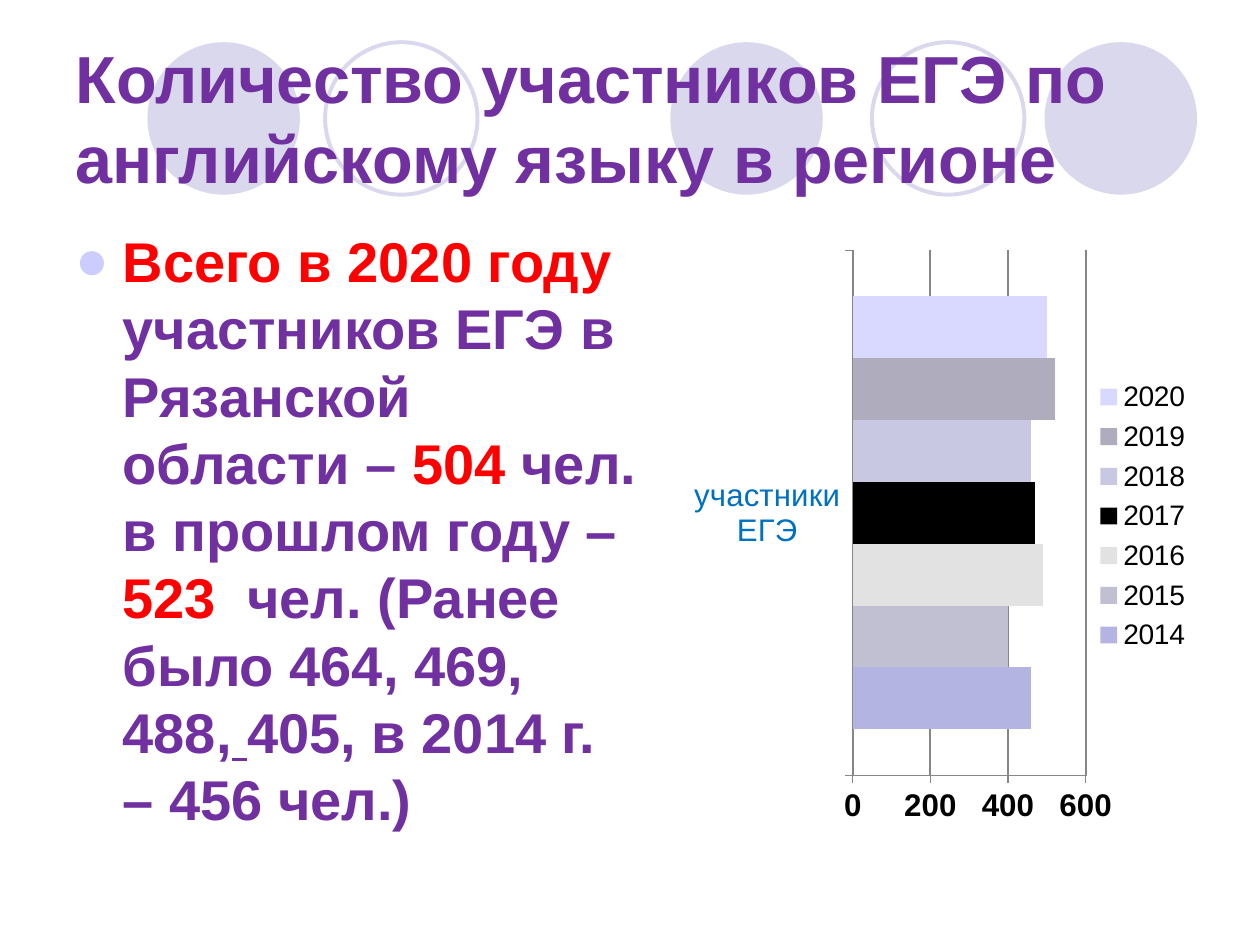
import pptx
import pptx.chart.data
import pptx.dml.color
import pptx.enum.chart
import pptx.enum.shapes
import pptx.enum.text
import pptx.oxml
import pptx.oxml.ns
import pptx.util
from lxml import etree

RGBColor = pptx.dml.color.RGBColor
PURPLE = RGBColor(0x70, 0x30, 0xA0)
RED = RGBColor(0xFF, 0x00, 0x00)
BLUE = RGBColor(0x00, 0x70, 0xC0)
BLACK = RGBColor(0x00, 0x00, 0x00)
GRAY = RGBColor(0x86, 0x86, 0x86)
LAVENDER = RGBColor(0xD9, 0xD8, 0xEC)
BULLET = RGBColor(0xCC, 0xCC, 0xFF)

FONT = "Arial"
WIDTH, HEIGHT = 10, 7.5
COLUMNS, ROWS = 20, 15

TITLE = "Количество участников ЕГЭ по английскому языку в регионе"
BODY = [  # text, colour, underlined
    ("Всего в 2020 году", RED, False),
    (" участников ЕГЭ в Рязанской области – ", PURPLE, False),
    ("504", RED, False),
    (" чел. в прошлом году – ", PURPLE, False),
    ("523  ", RED, False),
    ("чел. (Ранее было 464, 469, 488,", PURPLE, False),
    (" ", PURPLE, True),
    ("405, в 2014 г. – 456 чел.)", PURPLE, False),
]
PARTICIPANTS = [  # year, rounded number, bar colour
    ("2014", 460, RGBColor(0xB4, 0xB4, 0xE2)),
    ("2015", 400, RGBColor(0xC0, 0xC0, 0xD2)),
    ("2016", 490, RGBColor(0xE2, 0xE2, 0xE2)),
    ("2017", 470, BLACK),
    ("2018", 460, RGBColor(0xC8, 0xC8, 0xE2)),
    ("2019", 520, RGBColor(0xAF, 0xAD, 0xBD)),
    ("2020", 500, RGBColor(0xD9, 0xD9, 0xFF)),
]
CIRCLES = [  # left column, filled
    (2.34, True), (5.16, False), (10.64, True), (13.84, False), (16.58, True),
]


class SlideBuilder:
    """Draws styled elements on one slide, placed by grid columns and rows."""

    def __init__(self, presentation):
        self.slide = presentation.slides.add_slide(presentation.slide_layouts[5])
        self.column = presentation.slide_width / COLUMNS
        self.row = presentation.slide_height / ROWS

    def box(self, left, top, width, height):
        return (int(left * self.column), int(top * self.row),
                int(width * self.column), int(height * self.row))

    def style(self, font, size, color, bold=False):
        font.name = FONT
        font.size = pptx.util.Pt(size)
        font.bold = bold
        font.color.rgb = color

    def circle(self, left, top, diameter, filled):
        shape = self.slide.shapes.add_shape(
            pptx.enum.shapes.MSO_SHAPE.OVAL, *self.box(left, top, diameter, diameter))
        shape.shadow.inherit = False
        if filled:
            shape.fill.solid()
            shape.fill.fore_color.rgb = LAVENDER
            shape.line.fill.background()
        else:
            shape.fill.background()
            shape.line.color.rgb = LAVENDER
            shape.line.width = pptx.util.Pt(2.25)

    def title(self, text, *place):
        shape = self.slide.shapes.title
        shape.left, shape.top, shape.width, shape.height = self.box(*place)
        frame = shape.text_frame
        frame.text = text
        frame.word_wrap = True
        frame.vertical_anchor = pptx.enum.text.MSO_ANCHOR.MIDDLE
        paragraph = frame.paragraphs[0]
        paragraph.alignment = pptx.enum.text.PP_ALIGN.LEFT
        self.style(paragraph.runs[0].font, 38, PURPLE, bold=True)
        # The title lies in front of the circles.
        shape.element.getparent().append(shape.element)

    def bullet_text(self, parts, *place):
        frame = self.slide.shapes.add_textbox(*self.box(*place)).text_frame
        frame.word_wrap = True
        paragraph = frame.paragraphs[0]
        paragraph.space_before = pptx.util.Pt(2)
        for text, color, underlined in parts:
            run = paragraph.add_run()
            run.text = text
            self.style(run.font, 32, color, bold=True)
            run.font.underline = underlined
        self.add_bullet(paragraph, pptx.util.Pt(27))

    def add_bullet(self, paragraph, indent):
        qn = pptx.oxml.ns.qn
        properties = paragraph._p.get_or_add_pPr()
        properties.set("marL", str(indent))
        properties.set("indent", str(-indent))
        color = etree.SubElement(properties, qn("a:buClr"))
        etree.SubElement(color, qn("a:srgbClr"), val=str(BULLET))
        etree.SubElement(properties, qn("a:buFont"), typeface=FONT)
        etree.SubElement(properties, qn("a:buChar"), char="●")

    def bar_chart(self, category, series_rows, *place):
        data = pptx.chart.data.CategoryChartData()
        data.categories = [category]
        for name, value, _ in series_rows:
            data.add_series(name, [value])
        chart = self.slide.shapes.add_chart(
            pptx.enum.chart.XL_CHART_TYPE.BAR_CLUSTERED, *self.box(*place), data).chart
        self.style(chart.font, 16.1, BLACK)
        chart.has_title = False
        chart.has_legend = True
        chart.legend.position = pptx.enum.chart.XL_LEGEND_POSITION.RIGHT
        chart.legend.include_in_layout = False
        self.style(chart.legend.font, 16.1, BLACK)

        plot = chart.plots[0]
        plot.gap_width = 150
        plot.overlap = 0
        plot.vary_by_categories = False
        for series, (_, _, color) in zip(plot.series, series_rows):
            series.format.fill.solid()
            series.format.fill.fore_color.rgb = color
            series.invert_if_negative = False

        self.axis(chart.category_axis, 17.8, BLUE)
        value_axis = chart.value_axis
        self.axis(value_axis, 17.9, BLACK, bold=True)
        value_axis.minimum_scale, value_axis.maximum_scale = 0, 600
        value_axis.major_unit = 200
        value_axis.has_major_gridlines = True
        gridline = value_axis.major_gridlines.format.line
        gridline.color.rgb = GRAY
        gridline.width = pptx.util.Pt(1.25)
        self.place_part(chart, "plotArea", layoutTarget="inner", xMode="edge",
                        yMode="edge", x=0.36, y=0.03, w=0.43, h=0.86)
        self.place_part(chart, "legend", xMode="edge", yMode="edge",
                        x=0.8, y=0.23, w=0.19, h=0.47)

    def axis(self, axis, size, color, bold=False):
        axis.major_tick_mark = pptx.enum.chart.XL_TICK_MARK.OUTSIDE
        axis.has_major_gridlines = False
        axis.format.line.color.rgb = GRAY
        self.style(axis.tick_labels.font, size, color, bold)

    def place_part(self, chart, part, **settings):
        """Fix a chart part at shares of the chart's size."""
        qn = pptx.oxml.ns.qn
        element = chart.element.find(".//" + qn("c:" + part))
        layout = element.find(qn("c:layout"))
        if layout is None:
            layout = etree.Element(qn("c:layout"))
            position = element.find(qn("c:legendPos"))
            element.insert(0 if position is None else 1, layout)
        manual = etree.SubElement(layout, qn("c:manualLayout"))
        for name, value in settings.items():
            etree.SubElement(manual, qn("c:" + name), val=str(value))


def main():
    presentation = pptx.Presentation()
    presentation.slide_width = pptx.util.Inches(WIDTH)
    presentation.slide_height = pptx.util.Inches(HEIGHT)

    builder = SlideBuilder(presentation)
    for left, filled in CIRCLES:
        builder.circle(left, 0.67, 2.42, filled)
    builder.title(TITLE, 1, 0.6, 18, 2.5)
    builder.bullet_text(BODY, 1, 3.5, 9.32, 9.9)
    builder.bar_chart("участники ЕГЭ", PARTICIPANTS, 10.44, 3.68, 8.6, 9.7)
    presentation.save("out.pptx")


if __name__ == "__main__":
    main()
